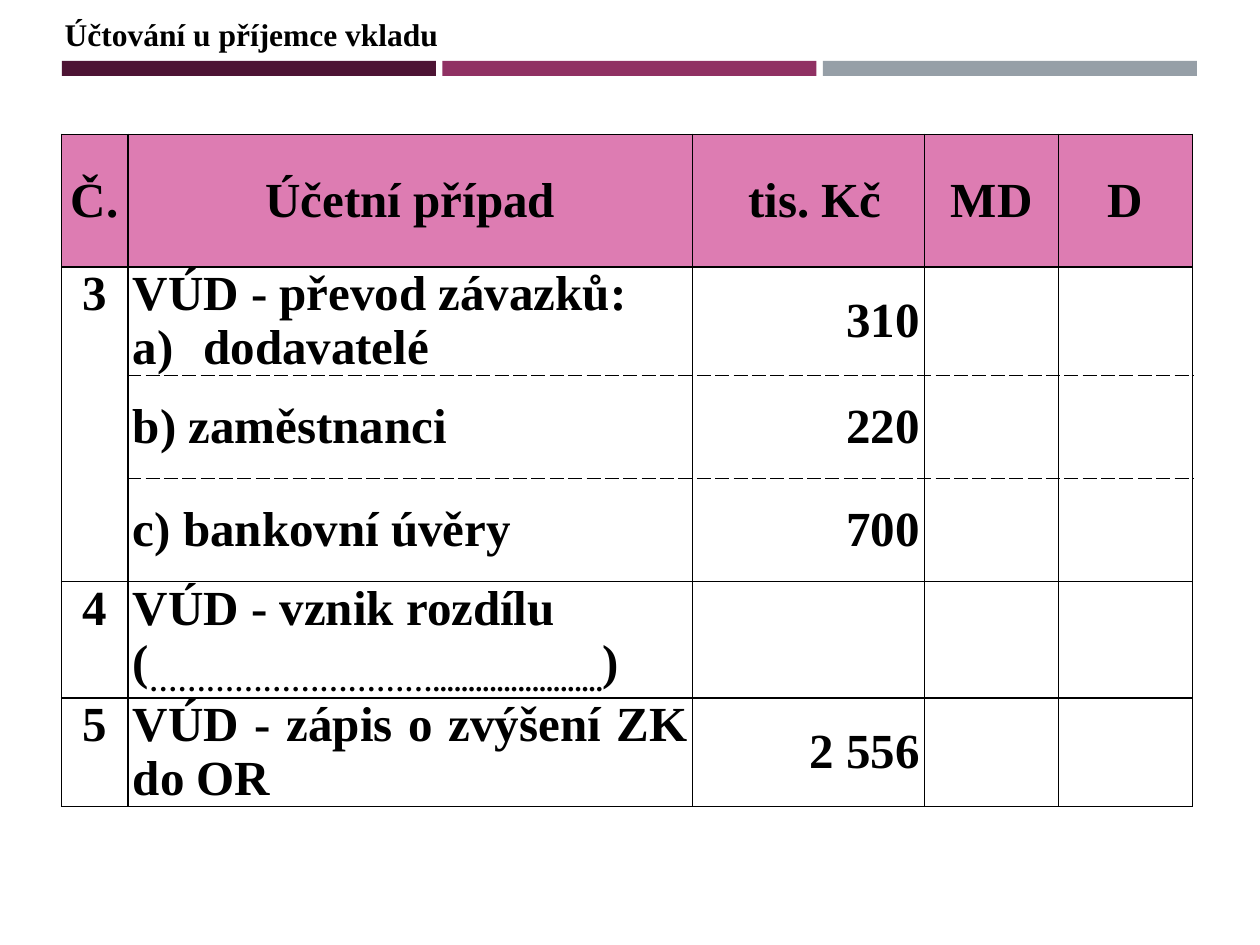
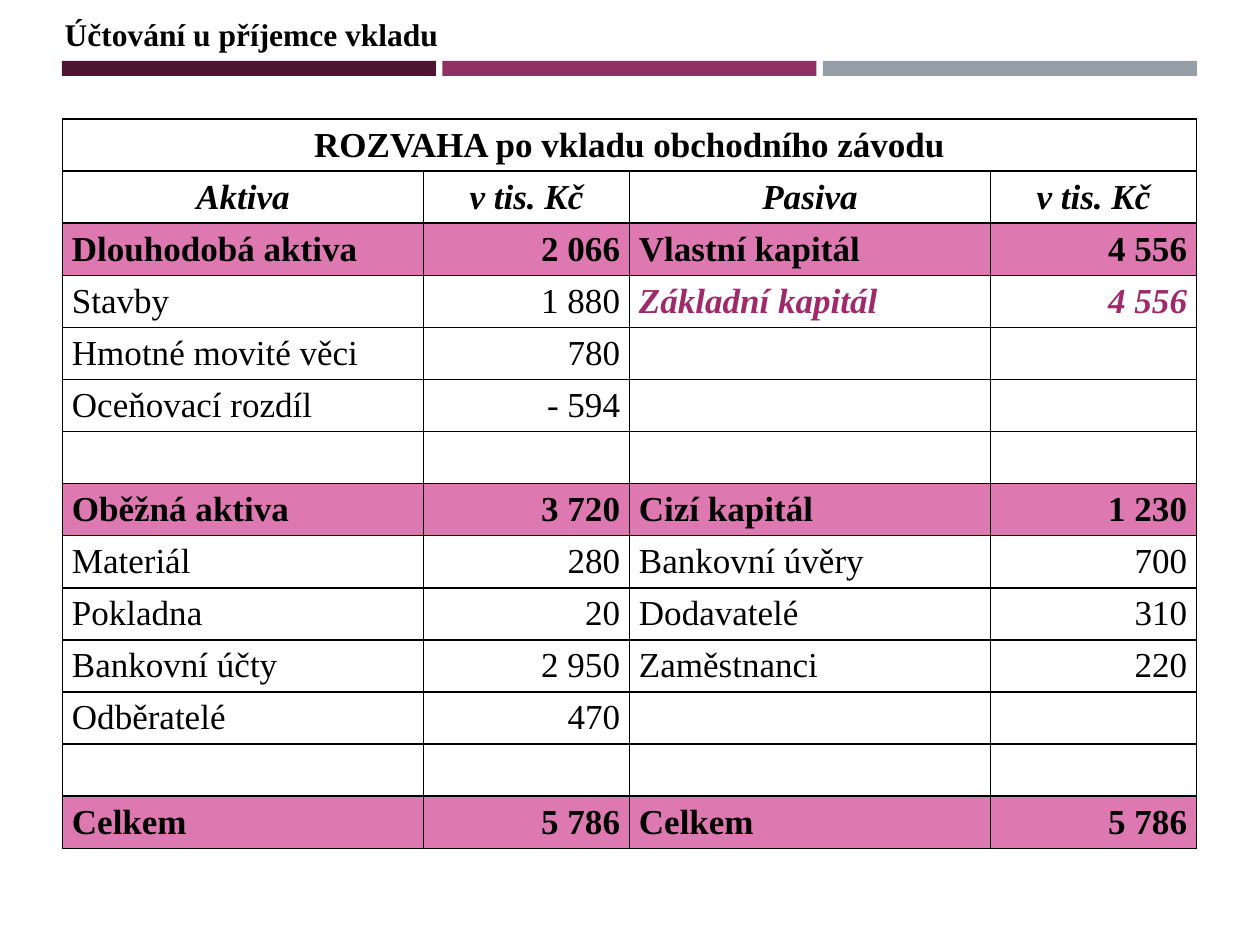
from lxml import etree
from pptx import Presentation
from pptx.dml.color import RGBColor
from pptx.enum.shapes import MSO_SHAPE
from pptx.enum.text import MSO_ANCHOR, MSO_AUTO_SIZE, PP_ALIGN
from pptx.oxml.ns import qn
from pptx.util import Cm, Pt

LEFT, CENTER, RIGHT, JUSTIFY = PP_ALIGN.LEFT, PP_ALIGN.CENTER, PP_ALIGN.RIGHT, PP_ALIGN.JUSTIFY
TOP, MIDDLE = MSO_ANCHOR.TOP, MSO_ANCHOR.MIDDLE
RECTANGLE = MSO_SHAPE.RECTANGLE

# Content
TITLE = "Účtování u příjemce vkladu"

# A cell is a text or a list of paragraphs; a paragraph is a text or a tuple
# of spans in which every second span is lowered.
ENTRIES = [
    ["Č.", "Účetní případ", " tis. Kč", "MD", "D"],
    ["3", ["VÚD - převod závazků:", "dodavatelé"], "310", "", ""],
    ["", "b) zaměstnanci", "220", "", ""],
    ["", "c) bankovní úvěry", "700", "", ""],
    ["4", ["VÚD - vznik rozdílu", ("(", "…………………………........................", ")")], "", "", ""],
    ["5", "VÚD - zápis o zvýšení ZK do OR", "2 556", "", ""],
]
TRANSFER_ROWS = (1, 2, 3)

BALANCE_SHEET = [
    ["ROZVAHA po vkladu obchodního závodu", "", "", ""],
    ["Aktiva", "v tis. Kč", "Pasiva", "v tis. Kč"],
    ["Dlouhodobá aktiva", "2 066", "Vlastní kapitál", "4 556"],
    ["Stavby", "1 880", "Základní kapitál", "4 556"],
    ["Hmotné movité věci", "780", "", ""],
    ["Oceňovací rozdíl", "- 594", "", ""],
    ["", "", "", ""],
    ["Oběžná aktiva", "3 720", "Cizí kapitál", "1 230"],
    ["Materiál", "280", "Bankovní úvěry", "700"],
    ["Pokladna", "20", "Dodavatelé", "310"],
    ["Bankovní účty", "2 950", "Zaměstnanci", "220"],
    ["Odběratelé", "470", "", ""],
    ["", "", "", ""],
    ["Celkem", "5 786", "Celkem", "5 786"],
]
HEADING_ROWS = (0, 1)
TOTAL_ROWS = (2, 7, 13)
SHARE_CAPITAL_CELLS = ((3, 2), (3, 3))

# Look
FONT = "Times New Roman"
BLACK, MAGENTA = "000000", "9F296B"
HEADER_PINK, TOTAL_PINK = "DD7CB2", "DD79B0"
BAND_COLOURS = ["4D1434", "903163", "969FA7"]
BAND_LEFT, BAND_TOP, BAND_WIDTH, BAND_HEIGHT, BAND_STEP = 1.25, 1.23, 7.54, 0.3, 7.67
TITLE_BOX = (1.05, 0.18, 8.13, 1.02)


def colour(value):
    return RGBColor.from_string(value)


def format_font(font, **changes):
    values = {"name": FONT, "size": Pt(18), "bold": True, "italic": False, **changes}
    font.color.rgb = colour(values.pop("color", BLACK))
    for name, value in values.items():
        setattr(font, name, value)


def add_bands(layout, page):
    """Draw the three bands and move them to the layout, where all pages share them."""
    for index, shade in enumerate(BAND_COLOURS):
        band = page.shapes.add_shape(
            RECTANGLE, Cm(BAND_LEFT + index * BAND_STEP), Cm(BAND_TOP),
            Cm(BAND_WIDTH), Cm(BAND_HEIGHT))
        band.name = f"Band {index + 1}"
        band.shadow.inherit = False
        band.fill.solid()
        band.fill.fore_color.rgb = colour(shade)
        band.line.fill.background()
        band.element.nvSpPr.cNvPr.set("id", str(101 + index))
        layout.shapes.element.append(band.element)


def add_page(deck, layout):
    page = deck.slides.add_slide(layout)
    title = page.shapes.title
    title.left, title.top, title.width, title.height = map(Cm, TITLE_BOX)
    frame = title.text_frame
    frame.text = TITLE
    frame.word_wrap = False
    frame.auto_size = MSO_AUTO_SIZE.NONE
    frame.vertical_anchor = MIDDLE
    frame.paragraphs[0].alignment = LEFT
    format_font(frame.paragraphs[0].runs[0].font)
    return page


def add_grid(page, left, top, widths, heights):
    frame = page.shapes.add_table(
        len(heights), len(widths), Cm(left), Cm(top), Cm(sum(widths)), Cm(sum(heights)))
    table = frame.table
    table.first_row = table.horz_banding = False
    for column, width in zip(table.columns, widths):
        column.width = Cm(width)
    for row, height in zip(table.rows, heights):
        row.height = Cm(height)
    return table


def write_cell(cell, content, alignment, margin, anchor=MIDDLE, **font):
    cell.vertical_anchor = anchor
    cell.margin_left = cell.margin_right = Cm(margin)
    cell.margin_top = cell.margin_bottom = 0
    paragraphs = content if isinstance(content, list) else [content]
    for number, spans in enumerate(paragraphs):
        frame = cell.text_frame
        para = frame.add_paragraph() if number else frame.paragraphs[0]
        para.alignment = alignment
        for index, text in enumerate((spans,) if isinstance(spans, str) else spans):
            if not text:
                continue
            span = para.add_run()
            span.text = text
            format_font(span.font, **font)
            if index % 2:
                span.font._element.set("baseline", "-25000")


def paint_cell(cell, fill=None, dashed=()):
    """Fill the cell and draw its four borders; sides in dashed are broken lines."""
    if fill:
        cell.fill.solid()
        cell.fill.fore_color.rgb = colour(fill)
    else:
        cell.fill.background()
    properties = cell._tc.get_or_add_tcPr()
    for index, side in enumerate("LRTB"):
        line = etree.Element(qn(f"a:ln{side}"), w=str(Pt(1)))
        solid = etree.SubElement(line, qn("a:solidFill"))
        etree.SubElement(solid, qn("a:srgbClr"), val=BLACK)
        etree.SubElement(line, qn("a:prstDash"), val="dash" if side in dashed else "solid")
        properties.insert(index, line)


def letter_paragraph(para):
    """Number the paragraph as a) with a hanging indent."""
    properties = para._p.get_or_add_pPr()
    indent = Cm(1.42)
    properties.set("marL", str(indent))
    properties.set("indent", str(-indent))
    etree.SubElement(properties, qn("a:buFont"), typeface="+mj-lt")
    etree.SubElement(properties, qn("a:buAutoNum"), type="alphaLcParenR")


def add_entries(page):
    table = add_grid(page, 1.24, 2.71, [1.34, 11.38, 4.68, 2.7, 2.7], [2.67] + [2.08] * 5)
    body_alignments = [CENTER, JUSTIFY, RIGHT, CENTER, CENTER]
    first, last = TRANSFER_ROWS[0], TRANSFER_ROWS[-1]
    for r, row in enumerate(ENTRIES):
        for c, content in enumerate(row):
            cell = table.cell(r, c)
            alignment = body_alignments[c] if r else CENTER
            write_cell(cell, content, alignment, 0.1,
                       anchor=TOP if r and c == 0 else MIDDLE, size=Pt(28))
            dashed = ""
            if c and r in TRANSFER_ROWS:
                dashed = ("T" if r > first else "") + ("B" if r < last else "")
            paint_cell(cell, None if r else HEADER_PINK, dashed)
    table.cell(first, 0).merge(table.cell(last, 0))
    letter_paragraph(table.cell(first, 1).text_frame.paragraphs[1])


def add_balance_sheet(page):
    table = add_grid(page, 1.26, 2.4, [7.28, 4.15] * 2, [1.05] * len(BALANCE_SHEET))
    body_alignments = [LEFT, RIGHT, JUSTIFY, RIGHT]
    for r, row in enumerate(BALANCE_SHEET):
        for c, content in enumerate(row):
            cell = table.cell(r, c)
            heading, total = r in HEADING_ROWS, r in TOTAL_ROWS
            capital = (r, c) in SHARE_CAPITAL_CELLS
            write_cell(cell, content, CENTER if heading else body_alignments[c], 0.19,
                       size=Pt(20), bold=heading or total or capital,
                       italic=r == 1 or capital, color=MAGENTA if capital else BLACK)
            paint_cell(cell, TOTAL_PINK if total else None)
    table.cell(0, 0).merge(table.cell(0, 3))


def main():
    deck = Presentation()
    deck.slide_width, deck.slide_height = Cm(25.4), Cm(19.05)
    layout = deck.slide_layouts.get_by_name("Title Only")
    entries_page = add_page(deck, layout)
    add_bands(layout, entries_page)
    add_entries(entries_page)
    add_balance_sheet(add_page(deck, layout))
    deck.save("out.pptx")


if __name__ == "__main__":
    main()
